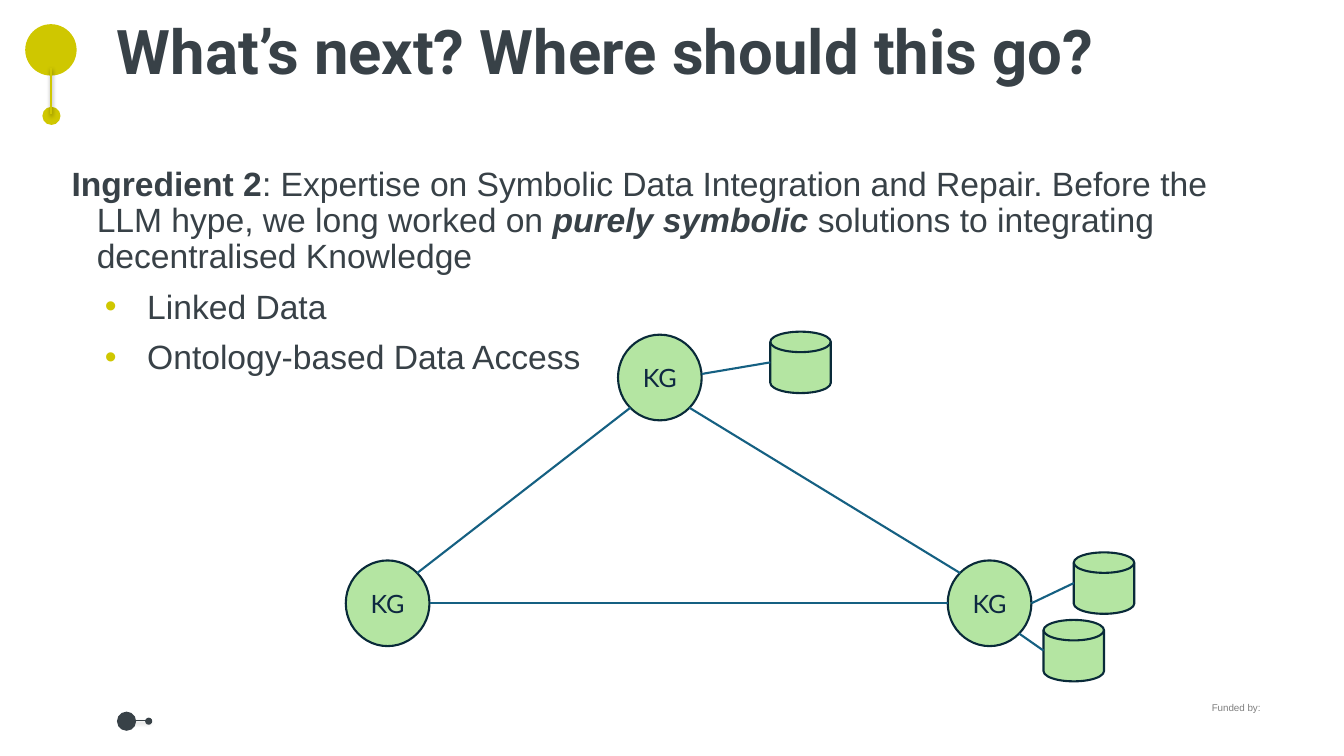
from math import cos, radians, sin

from lxml.etree import SubElement
from pptx import Presentation
from pptx.dml.color import RGBColor
from pptx.enum.shapes import MSO_CONNECTOR, MSO_SHAPE
from pptx.enum.text import MSO_ANCHOR, MSO_AUTO_SIZE, PP_ALIGN
from pptx.oxml.ns import qn
from pptx.util import Inches, Pt

SLATE, YELLOW, GREEN, NAVY, BLUE = "384147", "CFC700", "B4E5A2", "092A39", "156082"
NODE_WIDTH, NODE_HEIGHT = 0.83, 0.85
DISK_WIDTH, DISK_HEIGHT = 0.6, 0.61

presentation = Presentation()
presentation.slide_width = Inches(13.33)
presentation.slide_height = Inches(7.5)
slide = presentation.slides.add_slide(presentation.slide_layouts[1])
color = RGBColor.from_string


def add_figure(kind, left, top, width, height, fill, outline=None):
    shape = slide.shapes.add_shape(kind, Inches(left), Inches(top), Inches(width), Inches(height))
    shape.shadow.inherit = False
    shape.fill.solid()
    shape.fill.fore_color.rgb = color(fill)
    if outline:
        shape.line.color.rgb = color(outline)
        shape.line.width = Pt(1.5)
    else:
        shape.line.fill.background()
    return shape


def add_line(start, end, stroke, width=1.5, shadow=False):
    connector = slide.shapes.add_connector(
        MSO_CONNECTOR.STRAIGHT, *[Inches(value) for value in (*start, *end)])
    connector.line.color.rgb = color(stroke)
    connector.line.width = Pt(width)
    effects = SubElement(connector._element.spPr, qn("a:effectLst"))
    if shadow:
        outer = SubElement(effects, qn("a:outerShdw"), blurRad=str(Pt(3.1)), dist=str(Pt(1.6)),
                           dir="5400000", rotWithShape="0")
        black = SubElement(outer, qn("a:srgbClr"), val="000000")
        SubElement(black, qn("a:alpha"), val="38000")


add_line((1.32, 7.15), (1.49, 7.15), SLATE, 0.75, shadow=True)
for left, top, diameter, fill in [
    (1.44, 7.12, 0.07, SLATE),
    (1.16, 7.06, 0.19, SLATE),
    (0.42, 1.06, 0.18, YELLOW),
    (0.25, 0.24, 0.51, YELLOW),
]:
    add_figure(MSO_SHAPE.OVAL, left, top, diameter, diameter, fill)
add_line((0.51, 0.67), (0.51, 1.13), YELLOW, shadow=True)

funding = slide.shapes.add_textbox(Inches(11.92), Inches(6.91), Inches(0.91), Inches(0.21))
funding.text_frame.word_wrap = True
funding.text_frame.text = "Funded by:"
font = funding.text_frame.paragraphs[0].runs[0].font
font.name, font.size, font.color.rgb = "Arial", Pt(7), color("7F7F7F")

title, body = slide.shapes.title, slide.placeholders[1]
for placeholder, left, top, width, height in [
    (title, 1.06, 0.16, 12.09, 1.08),
    (body, 0.36, 1.61, 12.04, 4.76),
]:
    placeholder.left, placeholder.top = Inches(left), Inches(top)
    placeholder.width, placeholder.height = Inches(width), Inches(height)
    placeholder.text_frame.vertical_anchor = MSO_ANCHOR.TOP
    placeholder.text_frame.auto_size = MSO_AUTO_SIZE.NONE
    placeholder.text_frame.word_wrap = True

title.text_frame.text = "What’s next? Where should this go?"
heading = title.text_frame.paragraphs[0]
heading.alignment = PP_ALIGN.LEFT
heading.line_spacing = 0.9
font = heading.runs[0].font
font.name, font.size, font.bold, font.color.rgb = "Roboto", Pt(44), True, color(SLATE)

body_paragraphs = [
    [("Ingredient 2", True, False),
     (": Expertise on Symbolic Data Integration and Repair. Before the LLM hype, "
      "we long worked on ", False, False),
     ("purely symbolic ", True, True),
     ("solutions to integrating decentralised Knowledge", False, False)],
    [("Linked Data", False, False)],
    [("Ontology-based Data Access", False, False)],
]
for index, pieces in enumerate(body_paragraphs):
    frame = body.text_frame
    paragraph = frame.add_paragraph() if index else frame.paragraphs[0]
    properties = paragraph._p.get_or_add_pPr()
    if index:
        paragraph.level = 1
        properties.set("marL", str(Inches(1)))
        properties.set("indent", str(Inches(-0.42)))
        bullet_color = SubElement(properties, qn("a:buClr"))
        SubElement(bullet_color, qn("a:srgbClr"), val=YELLOW)
        SubElement(properties, qn("a:buFont"), typeface="Arial")
        SubElement(properties, qn("a:buChar"), char="•")
    else:
        properties.set("marL", str(Inches(0.5)))
        properties.set("indent", str(Inches(-0.25)))
        SubElement(properties, qn("a:buNone"))
    paragraph.line_spacing = 0.9
    paragraph.space_before = Pt(10 if index else 0)
    for text, bold, italic in pieces:
        run = paragraph.add_run()
        run.text = text
        font = run.font
        font.name, font.size, font.color.rgb = "Arial", Pt(24), color(SLATE)
        font.bold, font.italic = bold, italic

nodes = {"right": (9.4, 5.56), "left": (3.43, 5.56), "top": (6.13, 3.32)}
rims = {}
for name, (left, top) in nodes.items():
    node = add_figure(MSO_SHAPE.OVAL, left, top, NODE_WIDTH, NODE_HEIGHT, GREEN, NAVY)
    node.text_frame.text = "KG"
    node.text_frame.vertical_anchor = MSO_ANCHOR.MIDDLE
    paragraph = node.text_frame.paragraphs[0]
    paragraph.alignment = PP_ALIGN.CENTER
    font = paragraph.runs[0].font
    font.name, font.size, font.color.rgb = "Lato", Pt(18), color("0E2841")
    for angle in range(0, 360, 45):
        rims[name, angle] = (left + NODE_WIDTH / 2 * (1 + cos(radians(angle))),
                             top + NODE_HEIGHT / 2 * (1 + sin(radians(angle))))

for start, end in [
    (("left", 0), ("right", 180)),
    (("top", 45), ("right", 225)),
    (("top", 135), ("left", 315)),
]:
    add_line(rims[start], rims[end], BLUE)

for left, top, source in [
    (7.64, 3.29, (6.96, 3.71)),
    (10.65, 5.48, rims["right", 0]),
    (10.35, 6.15, rims["right", 45]),
]:
    add_figure(MSO_SHAPE.FLOWCHART_MAGNETIC_DISK, left, top, DISK_WIDTH, DISK_HEIGHT, GREEN, NAVY)
    add_line(source, (left, top + DISK_HEIGHT / 2), BLUE)

presentation.save("out.pptx")
